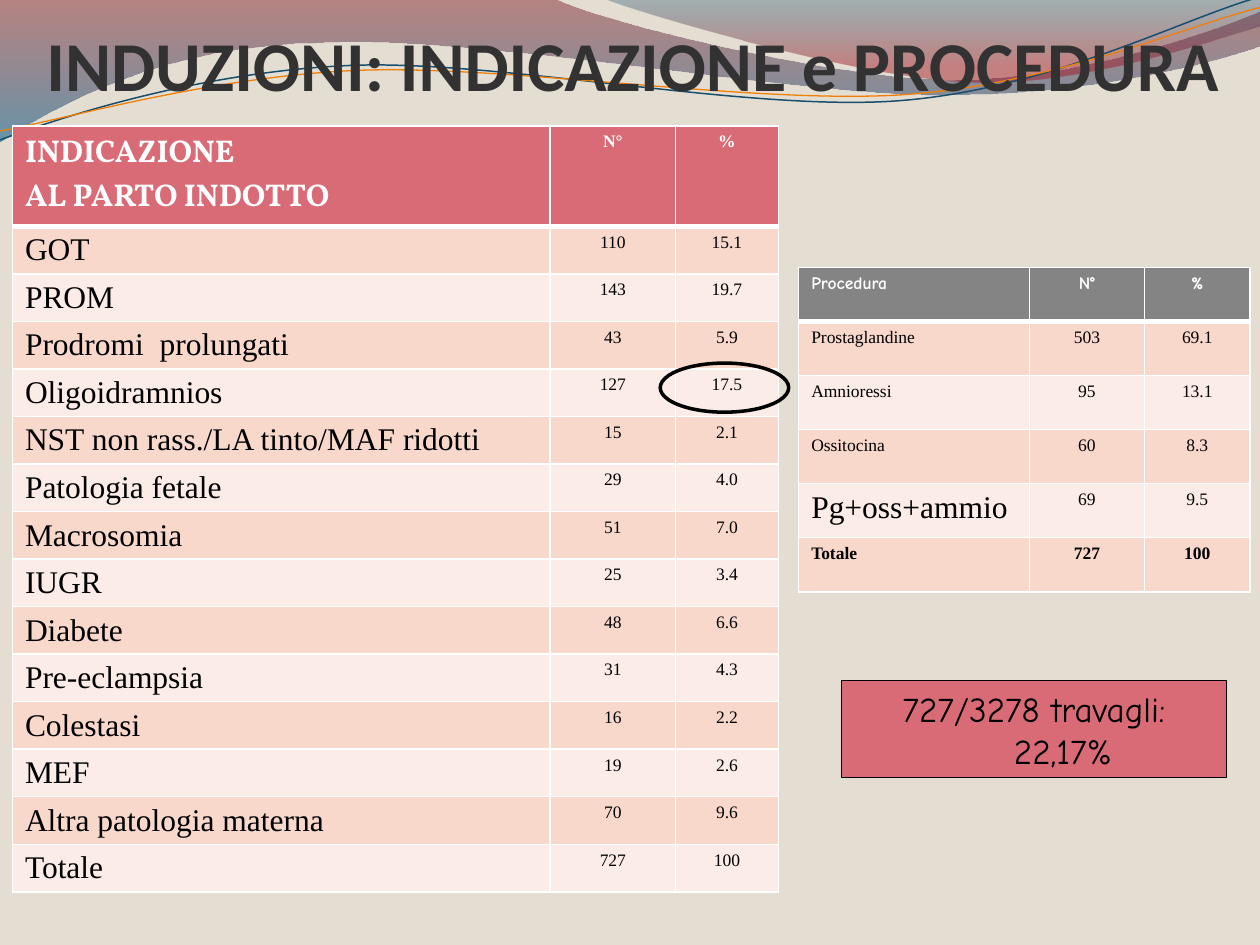
import math
import pptx
import pptx.util
import pptx.dml.color
import pptx.enum.shapes
import pptx.enum.text
import pptx.oxml.ns
from lxml import etree

Cm = pptx.util.Cm
Pt = pptx.util.Pt
qn = pptx.oxml.ns.qn
MID = pptx.enum.text.PP_ALIGN.CENTER
SHAPE = pptx.enum.shapes.MSO_SHAPE
SERIF = "Times New Roman"
COMIC = "Comic Neue"
TILT = -2.7

COLORS = {
    "sand": "E3DED1", "rose": "D96B77", "gray": "848484",
    "peach": "F9D8CC", "blush": "FCECE7", "white": "FFFFFF",
    "black": "000000", "ink": "323232", "wine": "7E1621",
    "sea": "005689", "navy": "094467", "red": "A10F1F",
    "blue": "184E6D", "orange": "F07F09",
}

BAND = [(0, -0.03), (11.18, -0.03), (12.09, 0.43, 16.87, 1.6, 19.25, 1.6),
        (21.67, 1.6, 24.33, 0.66, 25.4, 0.23), (25.43, 0.91),
        (24.97, 1.12, 22.1, 1.93, 18.95, 1.91),
        (15.8, 1.91, 9.7, 0.71, 6.53, 0.86),
        (3.28, 0.89, 1.17, 2.11, -0.03, 2.87), (0, -0.03)]
FIN = [(12.17, -0.03), (12.93, 0.28, 17.32, 1.57, 19.53, 1.65),
       (21.74, 1.75, 24.41, 0.81, 25.4, 0.53), (25.4, 0), (12.17, -0.03)]
WAVES = [
    ("blue", 0.85, (12.67, 1.46),
     [(0, 2.82), (1.22, 2.36, 4.01, 1.45, 7.04, 1.32),
      (10.03, 1.19, 15.06, 2.26, 18.11, 2.03),
      (21.16, 1.8, 23.83, 0.38, 25.35, -0.05)]),
    ("orange", 0.75, (12.69, 1.5),
     [(0, 2.64), (1.19, 2.44, 4.17, 1.55, 7.19, 1.42),
      (10.24, 1.3, 15.16, 2.11, 18.21, 1.91),
      (21.23, 1.7, 23.9, 0.53, 25.4, 0.15)]),
]

CAUSES = [
    ("INDICAZIONE \vAL PARTO INDOTTO", "N°", "%"),
    ("GOT", "110", "15.1"), ("PROM", "143", "19.7"),
    ("Prodromi  prolungati", "43", "5.9"), ("Oligoidramnios", "127", "17.5"),
    ("NST non rass./LA tinto/MAF ridotti", "15", "2.1"),
    ("Patologia fetale", "29", "4.0"), ("Macrosomia", "51", "7.0"),
    ("IUGR", "25", "3.4"), ("Diabete", "48", "6.6"),
    ("Pre-eclampsia", "31", "4.3"), ("Colestasi", "16", "2.2"),
    ("MEF", "19", "2.6"), ("Altra patologia materna", "70", "9.6"),
    ("Totale", "727", "100"),
]
METHODS = [
    ("Procedura", "N°", "%"), ("Prostaglandine", "503", "69.1"),
    ("Amnioressi", "95", "13.1"), ("Ossitocina", "60", "8.3"),
    ("Pg+oss+ammio", "69", "9.5"), ("Totale", "727", "100"),
]


def rgb(name):
    return pptx.dml.color.RGBColor.from_string(COLORS[name])


def style(para, size, face, color, bold=False, align=None):
    para.alignment = align
    for run in para.runs:
        font = run.font
        font.size, font.name, font.bold = Pt(size), face, bold
        font.color.rgb = rgb(color)


def pairs(step):
    return list(zip(step[::2], step[1::2]))


def turn(step, pivot):
    spin = math.radians(-TILT)
    cos, sin = math.cos(spin), math.sin(spin)
    flat = []
    for x, y in pairs(step):
        dx, dy = x - pivot[0], y - pivot[1]
        flat += [pivot[0] + dx * cos - dy * sin, pivot[1] + dx * sin + dy * cos]
    return tuple(flat)


def add_path(slide, steps):
    ends = [(Cm(step[-2]), Cm(step[-1])) for step in steps]
    form = slide.shapes.build_freeform(*ends[0])
    form.add_line_segments(ends[1:], close=False)
    shape = form.convert_to_shape()
    shape.shadow.inherit = False
    lines = list(shape._element.iter(qn("a:lnTo")))
    for line, step in zip(lines, steps[1:]):
        if len(step) == 6:
            curve = etree.Element(qn("a:cubicBezTo"))
            for x, y in pairs(step):
                etree.SubElement(curve, qn("a:pt"), x=str(Cm(x) - shape.left),
                                 y=str(Cm(y) - shape.top))
            line.getparent().replace(line, curve)
    return shape


def add_band(slide, steps, stops):
    shape = add_path(slide, steps)
    outline = next(shape._element.iter(qn("a:moveTo"))).getparent()
    etree.SubElement(outline, qn("a:close"))
    shape.line.fill.background()
    shape.fill.gradient()
    shape.fill.gradient_angle = 270
    for stop, (place, color, _) in zip(shape.fill.gradient_stops, stops):
        stop.position = place
        stop.color.rgb = rgb(color)
    marks = shape._element.spPr.iter(qn("a:srgbClr"))
    for mark, (_, _, alpha) in zip(list(marks), stops):
        etree.SubElement(mark, qn("a:alpha"), val=str(alpha * 1000))


def add_wave(slide, color, width, pivot, steps):
    shape = add_path(slide, [turn(step, pivot) for step in steps])
    shape.rotation = TILT
    shape.fill.background()
    shape.line.color.rgb = rgb(color)
    shape.line.width = Pt(width)


def add_shape(slide, kind, box, fill, width):
    shape = slide.shapes.add_shape(kind, *map(Cm, box))
    shape.shadow.inherit = False
    if fill:
        shape.fill.solid()
        shape.fill.fore_color.rgb = rgb(fill)
    else:
        shape.fill.background()
    shape.line.color.rgb = rgb("black")
    shape.line.width = Pt(width)
    return shape


def set_edge(cell, side, width):
    edge = etree.SubElement(cell._tc.get_or_add_tcPr(), qn("a:ln" + side),
                            w=str(Pt(width)))
    fill = etree.SubElement(edge, qn("a:solidFill"))
    etree.SubElement(fill, qn("a:srgbClr"), val=COLORS["white"])


def add_table(slide, rows, box, widths, heights, head, look):
    frame = slide.shapes.add_table(len(rows), len(widths), *map(Cm, box))
    table = frame.table
    for col, width in zip(table.columns, widths):
        col.width = Cm(width)
    for r, row in enumerate(rows):
        table.rows[r].height = Cm(heights[r])
        for c, text in enumerate(row):
            cell = table.cell(r, c)
            for side in "LRTB":
                thick = (r, side) in ((0, "B"), (1, "T"))
                set_edge(cell, side, 3 if thick else 1)
            cell.fill.solid()
            cell.fill.fore_color.rgb = rgb(
                head if r == 0 else "peach" if r % 2 else "blush")
            cell.text = text
            size, face, bold = look(r, c)
            style(cell.text_frame.paragraphs[0], size, face,
                  "black" if r else "white", bold, MID if c else None)
    frame.width, frame.height = map(Cm, box[2:])


def cause_look(r, c):
    return (10 if c else 18), (SERIF if r or c else "Vollkorn"), r == 0


def method_look(r, c):
    return (18 if (r, c) == (4, 0) else 10), (SERIF if r else COMIC), r in (0, 5)


def add_rate(slide):
    shape = add_shape(slide, SHAPE.RECTANGLE, (16.97, 13.72, 7.75, 1.96), "rose", 0.75)
    frame = shape.text_frame
    frame.text = "727/3278 travagli:\n22,17%"
    frame.paragraphs[1]._p.get_or_add_pPr().set("marL", str(Cm(1.17)))
    for para in frame.paragraphs:
        style(para, 20, COMIC, "black", align=MID)


def set_title(slide):
    title = slide.shapes.title
    title.left, title.top, title.width, title.height = map(
        Cm, (0.41, -0.28, 24.69, 2.41))
    frame = title.text_frame
    frame.text = "INDUZIONI: INDICAZIONE e PROCEDURA"
    frame.vertical_anchor = pptx.enum.text.MSO_ANCHOR.BOTTOM
    frame.margin_left = frame.margin_right = frame.margin_bottom = 0
    style(frame.paragraphs[0], 40, "Calibri", "ink", True, MID)
    slide.shapes._spTree.append(title._element)


def main():
    deck = pptx.Presentation()
    deck.slide_width, deck.slide_height = Cm(25.4), Cm(19.05)
    slide = deck.slides.add_slide(deck.slide_layouts[5])
    slide.background.fill.solid()
    slide.background.fill.fore_color.rgb = rgb("sand")
    add_band(slide, BAND, [(0, "wine", 45), (1, "sea", 55)])
    add_band(slide, FIN, [(0, "navy", 30), (0.8, "red", 45)])
    for wave in WAVES:
        add_wave(slide, *wave)
    add_table(slide, CAUSES, (0.25, 2.54, 15.44, 16), (10.84, 2.53, 2.07),
              [1.65] + [0.94] * 14, "rose", cause_look)
    add_rate(slide)
    set_title(slide)
    add_shape(slide, SHAPE.OVAL, (13.31, 7.32, 2.59, 0.99), None, 2)
    add_table(slide, METHODS, (16.1, 5.39, 9.09, 6.53), (4.65, 2.32, 2.13),
              [1.09] * 6, "gray", method_look)
    deck.save("out.pptx")


if __name__ == "__main__":
    main()
